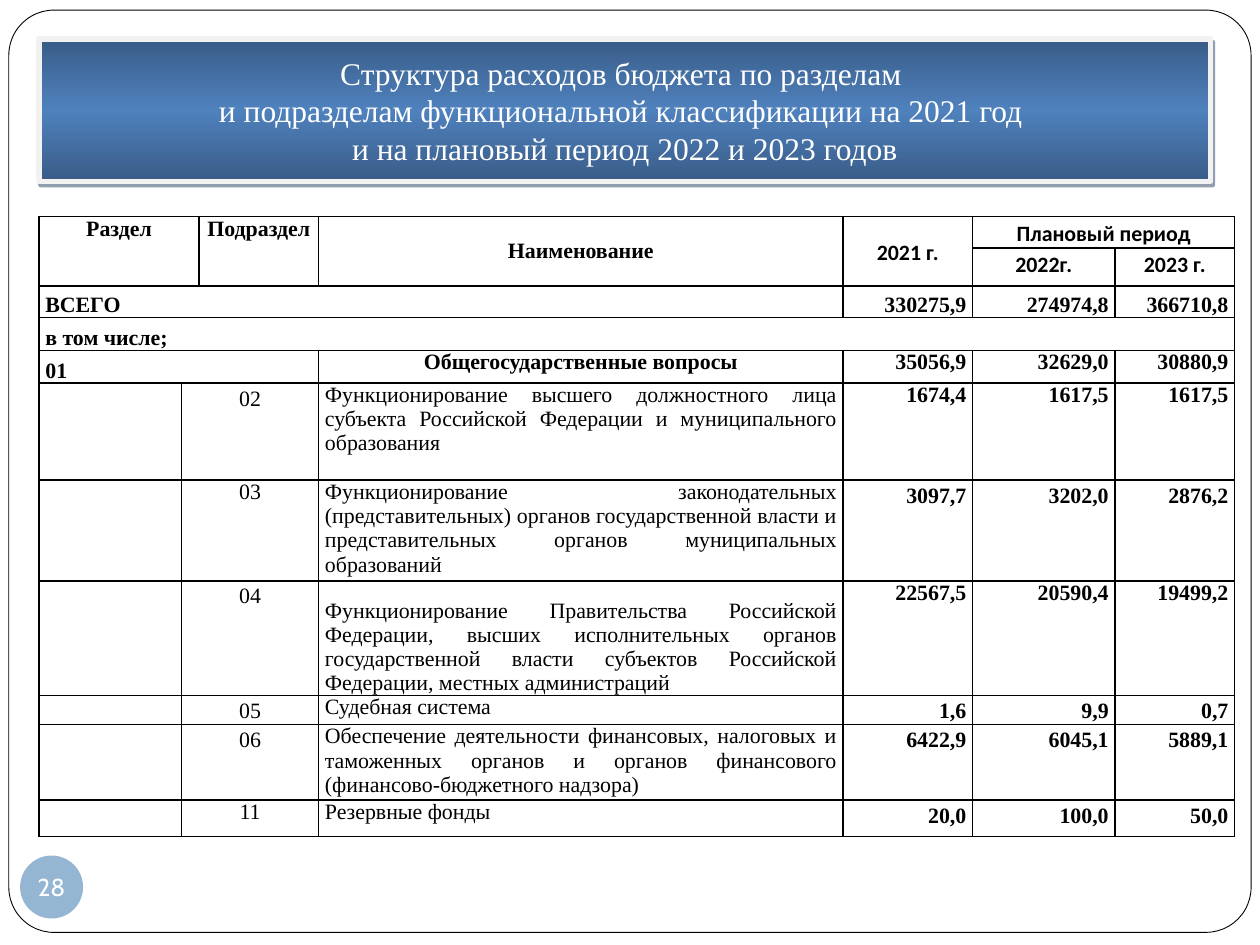
from lxml.etree import SubElement
from pptx import Presentation
from pptx.dml.color import RGBColor
from pptx.enum.shapes import MSO_SHAPE
from pptx.enum.text import MSO_ANCHOR, MSO_AUTO_SIZE, PP_ALIGN
from pptx.oxml import parse_xml
from pptx.oxml.ns import nsdecls, qn
from pptx.util import Inches, Pt

WHITE = RGBColor(0xFF, 0xFF, 0xFF)
BLACK = RGBColor(0, 0, 0)
PALE = RGBColor(0xF2, 0xF2, 0xF2)
SKY = RGBColor(0x94, 0xB6, 0xD2)
NAVY = RGBColor(0x39, 0x5C, 0x87)
BLUE = RGBColor(0x4F, 0x81, 0xBD)
SHADE = RGBColor(0x24, 0x3F, 0x60)

COLS, ROWS = 100, 75  # slide grid
UNIT = Inches(0.1)
SERIF, SANS = "Times New Roman", "Calibri"
SIZE = Pt(12.5)

TITLE = ["Структура расходов бюджета по разделам ",
         "и подразделам функциональной классификации на 2021 год ",
         "и на плановый период 2022 и 2023 годов"]

# Table grid, in slide grid units
WIDTHS = [11.3, 1.1, 9.5, 41.6, 10.3, 11.3, 9.5]
HEIGHTS = [2.5, 3, 2.5, 2.6, 2.6, 7.7, 8, 9.1, 2.3, 6, 2.9]

# Paragraph formats
LOOSE = {"line_spacing": 1.15, "space_after": Pt(10)}
AIRY = {"space_before": Pt(12), "space_after": Pt(3)}
LEFT = {"alignment": PP_ALIGN.LEFT}
MID = {"alignment": PP_ALIGN.CENTER}
RIGHT = {"alignment": PP_ALIGN.RIGHT}
FULL = {"alignment": PP_ALIGN.JUSTIFY}
TOP, CENTER, BASE = MSO_ANCHOR.TOP, MSO_ANCHOR.MIDDLE, MSO_ANCHOR.BOTTOM

# Header cells: row, column, rows, columns, text, format, anchor, font
HEAD = [
    (0, 0, 2, 2, "Раздел", MID | AIRY, TOP, SERIF),
    (0, 2, 2, 1, "Подраздел", MID | AIRY, TOP, SERIF),
    (0, 3, 2, 1, "Наименование", MID | AIRY, CENTER, SERIF),
    (0, 4, 2, 1, "2021 г.", MID | LOOSE, CENTER, SANS),
    (0, 5, 1, 2, "Плановый период", MID | LOOSE, TOP, SANS),
    (1, 5, 1, 1, "2022г.", MID | LOOSE, TOP, SANS),
    (1, 6, 1, 1, "2023 г.", MID | LOOSE, TOP, SANS),
    (2, 0, 1, 4, "ВСЕГО", LEFT, BASE, SERIF),
    (3, 0, 1, 7, "в том числе;", LEFT, BASE, SERIF),
    (4, 0, 1, 3, "01", LEFT, BASE, SERIF),
    (4, 3, 1, 1, "Общегосударственные вопросы", MID, TOP, SERIF),
]

# Sums of the summary rows: row, values, anchor
SUMS = [(2, ["330275,9", "274974,8", "366710,8"], BASE),
        (4, ["35056,9", "32629,0", "30880,9"], TOP)]

# Subsections: code, code format, name, name format, anchor, values, value format
PARTS = [
    ("02", LOOSE, "Функционирование высшего должностного лица субъекта "
     "Российской Федерации и муниципального образования",
     FULL, TOP, ["1674,4", "1617,5", "1617,5"], {}),
    ("03", {}, "Функционирование законодательных (представительных) органов "
     "государственной власти и представительных органов муниципальных образований",
     FULL, TOP, ["3097,7", "3202,0", "2876,2"], LOOSE),
    ("04", LOOSE, "Функционирование Правительства Российской Федерации, высших "
     "исполнительных органов государственной власти субъектов Российской "
     "Федерации, местных администраций",
     FULL, BASE, ["22567,5", "20590,4", "19499,2"], {}),
    ("05", LOOSE, "Судебная система",
     LEFT, TOP, ["1,6", "9,9", "0,7"], LOOSE),
    ("06", LOOSE, "Обеспечение деятельности финансовых, налоговых и таможенных "
     "органов и органов финансового (финансово-бюджетного надзора)",
     FULL, TOP, ["6422,9", "6045,1", "5889,1"], LOOSE),
    ("11", {}, "Резервные фонды",
     FULL, TOP, ["20,0", "100,0", "50,0"], LOOSE),
]


def grid(*spans):
    """Turn grid columns and rows into lengths."""
    return [round(n * UNIT) for n in spans]


def style(item, form):
    for key, val in form.items():
        setattr(item, key, val)


def write(para, text, face, size, color, bold=False, form=MID):
    run = para.add_run()
    run.text = text
    style(para, form)
    style(run.font, {"name": face, "size": size, "bold": bold})
    run.font.color.rgb = color


def draw_frame(slide, box):
    frame = slide.shapes.add_shape(MSO_SHAPE.ROUNDED_RECTANGLE, *box)
    frame.adjustments[0] = 0.049
    frame.shadow.inherit = False
    frame.fill.solid()
    frame.fill.fore_color.rgb = WHITE
    frame.line.color.rgb = BLACK
    frame.line.width = Pt(0.5)
    slide.shapes._spTree.insert(2, frame._element)  # behind the title


def draw_badge(slide, box):
    badge = slide.shapes.add_shape(MSO_SHAPE.OVAL, *box)
    badge.shadow.inherit = False
    badge.fill.solid()
    badge.fill.fore_color.rgb = SKY
    badge.line.fill.background()
    text = badge.text_frame
    style(text, {"margin_left": 0, "margin_right": 0, "margin_top": 0,
                 "margin_bottom": 0, "word_wrap": False,
                 "vertical_anchor": CENTER})
    write(text.paragraphs[0], "28", "Cabin", Pt(14), WHITE)


def draw_title(slide, box):
    title = slide.shapes.title
    style(title, dict(zip(("left", "top", "width", "height"), box)))
    title.line.color.rgb = PALE
    title.line.width = Pt(3)
    # Rounded outline, three-stop gradient and shadow
    props = title._element.spPr
    stops = "".join(
        f'<a:gs pos="{pos}"><a:srgbClr val="{tone}"/></a:gs>'
        for pos, tone in ((0, NAVY), (50000, BLUE), (100000, NAVY)))
    props.insert(1, parse_xml(
        f'<a:prstGeom {nsdecls("a")} prst="flowChartAlternateProcess"><a:avLst/></a:prstGeom>'))
    props.insert(2, parse_xml(
        f'<a:gradFill {nsdecls("a")} rotWithShape="1"><a:gsLst>{stops}</a:gsLst>'
        '<a:lin ang="5400000" scaled="0"/></a:gradFill>'))
    props.append(parse_xml(
        f'<a:effectLst {nsdecls("a")}><a:outerShdw dist="28000" dir="3780000" algn="ctr" '
        f'rotWithShape="0"><a:srgbClr val="{SHADE}"><a:alpha val="50000"/></a:srgbClr>'
        '</a:outerShdw></a:effectLst>'))
    text = title.text_frame
    style(text, {"auto_size": MSO_AUTO_SIZE.NONE, "word_wrap": True,
                 "vertical_anchor": CENTER})
    for i, line in enumerate(TITLE):
        para = text.add_paragraph() if i else text.paragraphs[0]
        write(para, line, SERIF, Pt(18), WHITE)


def rule_cell(cell):
    """Clear the fill, set margins and draw the four borders."""
    style(cell, {"margin_left": Inches(0.05), "margin_right": Inches(0.05),
                 "margin_top": 0, "margin_bottom": 0})
    cell.fill.background()
    props = cell._tc.get_or_add_tcPr()
    for i, side in enumerate("LRTB"):
        props.insert(i, parse_xml(
            f'<a:ln{side} {nsdecls("a")} w="12700"><a:solidFill>'
            f'<a:srgbClr val="{BLACK}"/></a:solidFill></a:ln{side}>'))


def fill_cell(cell, text, form, anchor=TOP, face=SERIF, bold=True):
    cell.vertical_anchor = anchor
    write(cell.text_frame.paragraphs[0], text, face, SIZE, BLACK, bold, form)


def draw_table(slide, box):
    table = slide.shapes.add_table(len(HEIGHTS), len(WIDTHS), *box).table
    style(table, {"first_row": False, "horz_banding": False})
    for col, width in zip(table.columns, grid(*WIDTHS)):
        col.width = width
    for row, height in zip(table.rows, grid(*HEIGHTS)):
        row.height = height
    for cell in table.iter_cells():
        rule_cell(cell)

    # Header and summary rows
    for row, col, high, wide, text, form, anchor, face in HEAD:
        cell = table.cell(row, col)
        if high * wide > 1:
            cell.merge(table.cell(row + high - 1, col + wide - 1))
        fill_cell(cell, text, form, anchor, face)
    for row, vals, anchor in SUMS:
        for col, val in enumerate(vals, 4):
            fill_cell(table.cell(row, col), val, RIGHT, anchor)

    # Subsection rows
    for row, (code, gap, name, form, anchor, vals, space) in enumerate(PARTS, 5):
        table.cell(row, 1).merge(table.cell(row, 2))
        fill_cell(table.cell(row, 1), code, MID | gap, bold=False)
        fill_cell(table.cell(row, 3), name, form, anchor, bold=False)
        for col, val in enumerate(vals, 4):
            fill_cell(table.cell(row, col), val, RIGHT | space)

    # Keep empty cells from stretching their rows
    for cell in table.iter_cells():
        para = cell.text_frame.paragraphs[0]
        if not para.runs:
            SubElement(para._p, qn("a:endParaRPr")).set("sz", "1200")


def main():
    deck = Presentation()
    deck.slide_width, deck.slide_height = grid(COLS, ROWS)
    slide = deck.slides.add_slide(deck.slide_layouts[5])
    draw_frame(slide, grid(0.7, 0.8, 98.6, 73.2))
    draw_badge(slide, grid(1.6, 67.9, 5, 5))
    draw_title(slide, grid(3.1, 3.1, 93, 11.3))
    draw_table(slide, grid(3.1, 17.2, sum(WIDTHS), sum(HEIGHTS)))
    deck.save("out.pptx")


if __name__ == "__main__":
    main()
